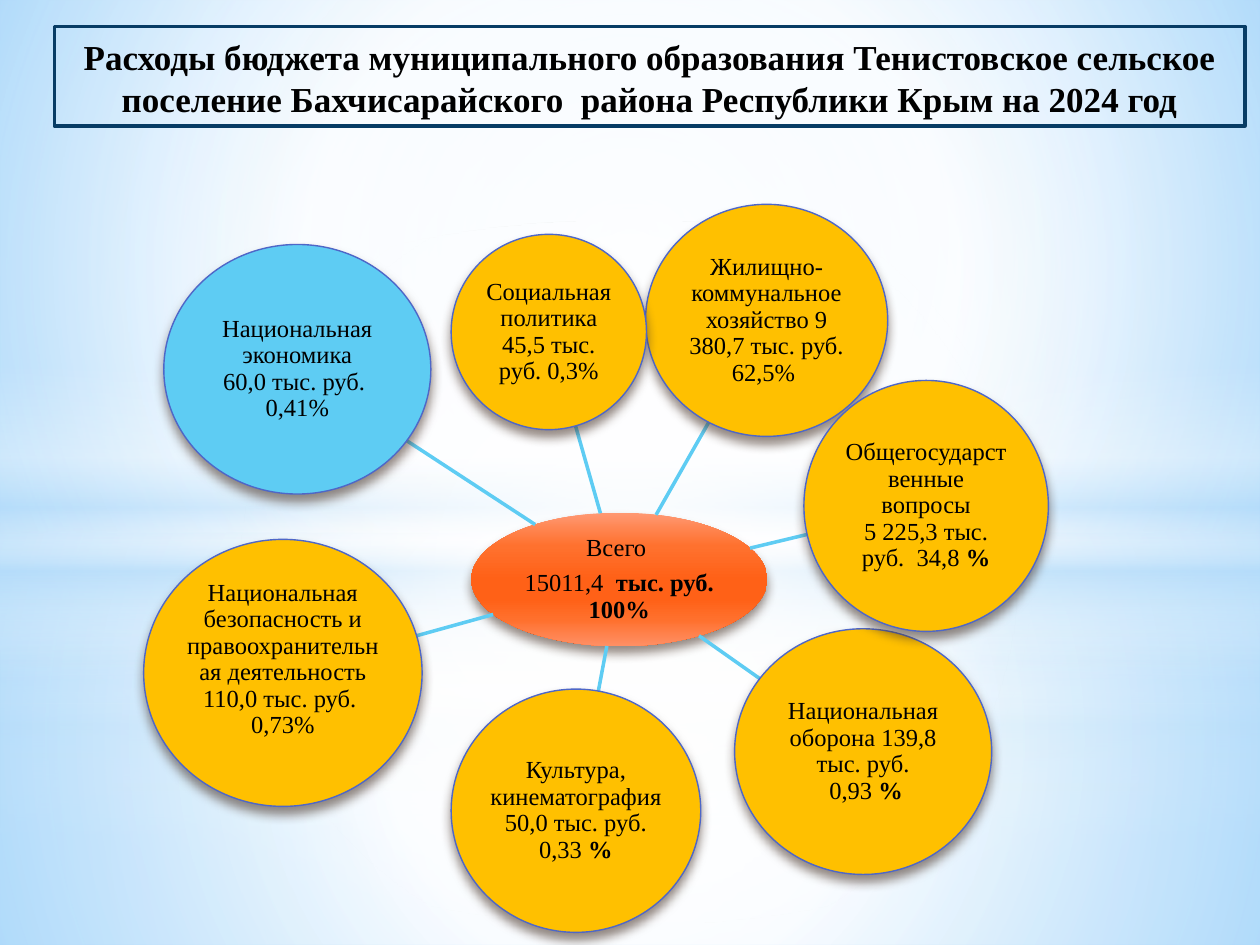
import math

import pptx
import pptx.dml.color
import pptx.enum.shapes
import pptx.enum.text
import pptx.oxml
import pptx.oxml.ns
import pptx.util

Pt = pptx.util.Pt
RGB = pptx.dml.color.RGBColor
SHAPE = pptx.enum.shapes.MSO_SHAPE
ANCHOR = pptx.enum.text.MSO_ANCHOR
qn = pptx.oxml.ns.qn

BLACK = RGB(0, 0, 0)
NAVY = RGB(0x07, 0x3C, 0x65)
SKY = RGB(0x5E, 0xCC, 0xF3)
AMBER = RGB(0xFF, 0xC0, 0x00)
OUTLINE = RGB(0x4E, 0x67, 0xC8)
SHADE = RGB(0x4E, 0x3B, 0x30)
WHITE = RGB(0xFF, 0xFF, 0xFF)
HAZE = RGB(0xB4, 0xDC, 0xFA)

CENTRED = (50, 50, 50, 50)
NS = pptx.oxml.ns.nsdecls("a")


def colour_xml(colour, opacity=100):
    return f'<a:srgbClr val="{colour}"><a:alpha val="{opacity * 1000}"/></a:srgbClr>'


def set_gradient(fill, element, stops, focus=None):
    """Circular gradient around focus (left, top, right, bottom %), else top to bottom."""
    fill.gradient()
    stop_xml = "".join(
        f'<a:gs pos="{position * 1000}">{colour_xml(*tint)}</a:gs>' for position, *tint in stops)
    if focus:
        sides = " ".join(f'{side}="{value * 1000}"' for side, value in zip("ltrb", focus))
        direction = f'<a:path path="circle"><a:fillToRect {sides}/></a:path>'
    else:
        direction = '<a:lin ang="5400000" scaled="0"/>'
    default = next(element.iter(qn("a:gradFill")))
    default.getparent().replace(default, pptx.oxml.parse_xml(
        f'<a:gradFill {NS} rotWithShape="1"><a:gsLst>{stop_xml}</a:gsLst>{direction}</a:gradFill>'))


class Sheet:
    font = "Times New Roman"
    size = 14

    def __init__(self, slide):
        self.slide = slide

    def shape(self, kind, box, fill=None, line=None, width=0.79):
        shape = self.slide.shapes.add_shape(kind, *map(Pt, box))
        shape.shadow.inherit = False
        if fill is None:
            shape.fill.background()
        else:
            shape.fill.solid()
            shape.fill.fore_color.rgb = fill
        if line is None:
            shape.line.fill.background()
        else:
            shape.line.color.rgb = line
            shape.line.width = Pt(width)
        return shape

    def glow(self, kind, box, stops, focus=None):
        shape = self.shape(kind, box)
        set_gradient(shape.fill, shape.element, stops, focus)
        return shape

    def drop_shadow(self, shape):
        effects = shape.element.spPr.find(qn("a:effectLst"))
        effects.append(pptx.oxml.parse_xml(
            f'<a:outerShdw {NS} blurRad="{Pt(6)}" dist="{Pt(4)}" dir="5400000" '
            f'rotWithShape="0">{colour_xml(SHADE, 60)}</a:outerShdw>'))

    def text(self, shape, paragraphs, size=None, spacing=0.9, gap=0, inset=0.7, lift=0):
        """Runs starting with * are bold, \\n is a line break; lift raises centred text."""
        frame = shape.text_frame
        frame.word_wrap = True
        frame.vertical_anchor = ANCHOR.MIDDLE
        frame.margin_left = frame.margin_right = frame.margin_top = Pt(inset)
        frame.margin_bottom = Pt(inset + lift)
        for index, runs in enumerate(paragraphs):
            paragraph = frame.paragraphs[0] if index == 0 else frame.add_paragraph()
            paragraph.alignment = pptx.enum.text.PP_ALIGN.CENTER
            paragraph.line_spacing = spacing
            paragraph.space_after = Pt(gap if index < len(paragraphs) - 1 else 0)
            for content in runs:
                for part, piece in enumerate(content.lstrip("*").split("\n")):
                    if part:
                        paragraph.add_line_break()
                    run = paragraph.add_run()
                    run.text = piece
                    run.font.name = self.font
                    run.font.size = Pt(size or self.size)
                    run.font.bold = content.startswith("*")
                    run.font.color.rgb = BLACK

    def spoke(self, hub, circle):
        """Line between the rims of two ellipses, along the line of their centres."""
        (x1, y1), (x2, y2) = [(x + w / 2, y + h / 2) for x, y, w, h in (hub, circle)]
        dx, dy = x2 - x1, y2 - y1
        start, end = [1 / math.hypot(2 * dx / w, 2 * dy / h) for _, _, w, h in (hub, circle)]
        points = (x1 + dx * start, y1 + dy * start, x2 - dx * end, y2 - dy * end)
        line = self.slide.shapes.add_connector(
            pptx.enum.shapes.MSO_CONNECTOR.STRAIGHT, *map(Pt, points))
        line.line.color.rgb = SKY
        line.line.width = Pt(2)
        line.element.spPr.append(pptx.oxml.parse_xml(f"<a:effectLst {NS}/>"))


HUB = (269.3, 293, 169.2, 76.3)
HUB_TINTS = [(0, RGB(0xFF, 0x98, 0x72)), (25, RGB(0xFF, 0x71, 0x2E)),
             (50, RGB(0xFF, 0x61, 0x17)), (65, RGB(0xFF, 0x61, 0x17)),
             (80, RGB(0xFF, 0x70, 0x2D)), (100, RGB(0xFF, 0x8F, 0x64))]
BAND = [(0, WHITE, 0), (29, WHITE, 30), (45, HAZE, 40),
        (55, WHITE, 26), (65, HAZE, 60), (100, WHITE, 0)]

# Box, fill, paragraphs of runs, lift of the text
EXPENSES = [
    ((93.6, 139.7, 152.6, 142.6), SKY,
     [["Национальная экономика"], ["60,0 тыс. руб. "], ["0,41%"]], 0),
    ((419.8, 359.3, 146.9, 140.4), AMBER,
     [["Национальная оборона 139,8 тыс. руб."], [" 0,93 ", "*%"]], 0),
    ((368.9, 116.8, 138.4, 132.6), AMBER,
     [["Жилищно-коммунальное хозяйство 9 380,7 тыс. руб. 62,5% "]], 0),
    ((459.4, 217.4, 139.7, 143.4), AMBER,
     [["Общегосударственные\nвопросы\n5 225,3 тыс. руб.  34,8 ", "*%"]], 0),
    ((257.8, 393.8, 142.6, 139), AMBER,
     [["Культура, кинематография 50,0 тыс. руб."], ["0,33", "* %"]], 0),
    ((82.1, 308.2, 159.1, 152.6), AMBER,
     [["Национальная безопасность и правоохранительная деятельность 110,0 тыс. руб.  0,73%"]], 15),
    ((257.8, 133.9, 111.6, 111.6), AMBER,
     [["Социальная политика 45,5 тыс. руб. 0,3%"]], 0),
]


def draw_backdrop(sheet):
    background = sheet.slide.background.fill
    set_gradient(background, sheet.slide.element,
                 [(0, RGB(0x9E, 0xD5, 0xFF)), (60, WHITE), (100, RGB(0x5B, 0xB9, 0xFF))],
                 (20, 10, 20, 60))
    # Horizon, band top, step in opacity, reach of the central light
    for horizon, band_top, step, reach in ((401.8, 296.6, 0, 56), (304.6, 208.8, 1, 54)):
        sheet.glow(SHAPE.RECTANGLE, (0, horizon, 720, 540 - horizon),
                   [(0, WHITE, 91 + step), (37, WHITE, 76 + step), (100, HAZE, 79 + step)], CENTRED)
        sheet.glow(SHAPE.RECTANGLE, (0, 0, 720, horizon),
                   [(0, WHITE, 89 + step), (48, WHITE, 62 + step), (100, HAZE, 79 + step)], CENTRED)
        sheet.glow(SHAPE.RECTANGLE, (0, band_top, 720, 180), BAND)
        sheet.glow(SHAPE.OVAL, (0, 126, 720, 401.8), [(0, WHITE), (reach, WHITE, 0)], CENTRED)


def main():
    deck = pptx.Presentation()
    deck.slide_width, deck.slide_height = Pt(720), Pt(540)
    sheet = Sheet(deck.slides.add_slide(deck.slide_layouts[6]))
    draw_backdrop(sheet)

    total = sheet.glow(SHAPE.OVAL, HUB, HUB_TINTS)
    sheet.drop_shadow(total)
    sheet.text(total, [["Всего "], ["15011,4", "*  тыс. руб. 100%"]], gap=5)

    for box, fill, paragraphs, lift in EXPENSES:
        sheet.spoke(HUB, box)
        expense = sheet.shape(SHAPE.OVAL, box, fill, OUTLINE)
        sheet.drop_shadow(expense)
        sheet.text(expense, paragraphs, lift=lift)

    title = sheet.shape(SHAPE.RECTANGLE, (31, 15.1, 680.4, 56.9), line=NAVY, width=2)
    sheet.text(title, [["*Расходы бюджета муниципального образования Тенистовское сельское "
                        "поселение Бахчисарайского  района Республики Крым на 2024 год"]],
               size=20, spacing=1, inset=3.6)
    title.text_frame.vertical_anchor = ANCHOR.BOTTOM
    deck.save("out.pptx")


if __name__ == "__main__":
    main()
